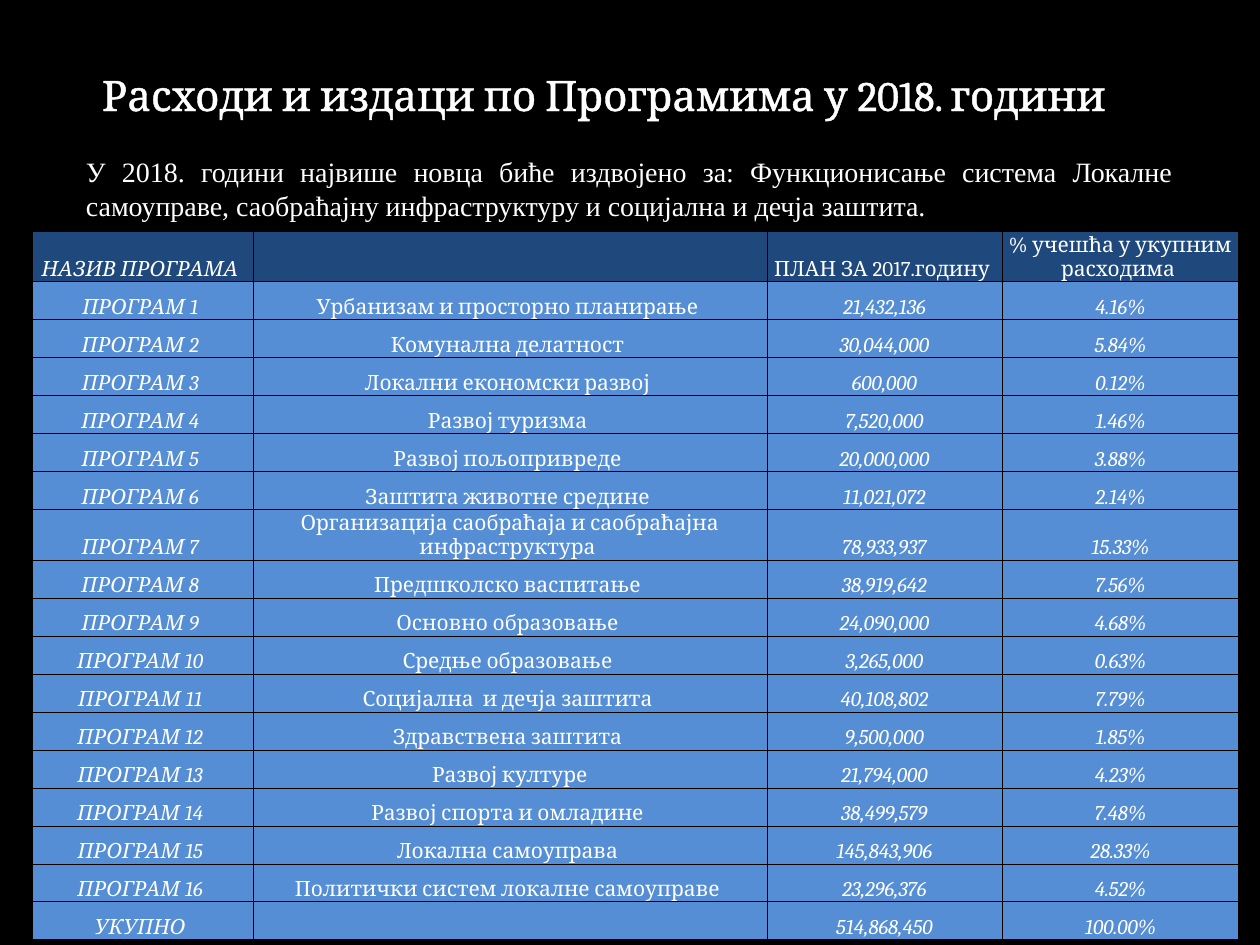
from dataclasses import dataclass

import lxml.etree
import pptx
import pptx.dml.color
import pptx.enum.text
import pptx.oxml.ns
import pptx.util

PX = 914400 // 126
ALIGN = pptx.enum.text.PP_ALIGN
ANCHOR = pptx.enum.text.MSO_ANCHOR
qn = pptx.oxml.ns.qn


@dataclass(frozen=True)
class Theme:
    background: str = "000000"
    text: str = "FFFFFF"
    header: str = "1F497D"
    body: str = "558ED5"
    border: str = "000000"
    serif: str = "Cambria"
    roman: str = "Times New Roman"
    title_size: int = 24
    intro_size: int = 16
    cell_size: int = 12
    outline: float = 1.45
    border_width: float = 0.5


THEME = Theme()

TITLE = "Расходи и издаци по Програмима у 2018. години"
INTRO = (
    "У 2018. години највише новца биће издвојено за: Функционисање система "
    "Локалне самоуправе, саобраћајну инфраструктуру и социјална и дечја заштита."
)
HEADER = ("НАЗИВ ПРОГРАМА ", "", "ПЛАН ЗА 2017.годину ", "% учешћа у укупним расходима ")
PROGRAMS = [
    ("Урбанизам и просторно планирање ", "21,432,136", "4.16%"),
    ("Комунална делатност ", "30,044,000", "5.84%"),
    ("Локални економски развој ", "600,000", "0.12%"),
    ("Развој туризма ", "7,520,000", "1.46%"),
    ("Развој пољопривреде ", "20,000,000", "3.88%"),
    ("Заштита животне средине ", "11,021,072", "2.14%"),
    ("Организација саобраћаја и саобраћајна инфраструктура ", "78,933,937", "15.33%"),
    ("Предшколско васпитање ", "38,919,642", "7.56%"),
    ("Основно образовање ", "24,090,000", "4.68%"),
    ("Средње образовање ", "3,265,000", "0.63%"),
    ("Социјална  и дечја заштита ", "40,108,802", "7.79%"),
    ("Здравствена заштита ", "9,500,000", "1.85%"),
    (" Развој културе ", "21,794,000", "4.23%"),
    ("Развој спорта и омладине ", "38,499,579", "7.48%"),
    ("Локална самоуправа ", "145,843,906", "28.33%"),
    ("Политички систем локалне самоуправе ", "23,296,376", "4.52%"),
]
TOTAL = ("УКУПНО ", "", "514,868,450", "100.00%")
COLUMNS = (221, 514, 235, 237)
ROW_HEIGHT = 38


def rgb(color):
    return pptx.dml.color.RGBColor.from_string(color)


def add_run(p, text, size, font, italic=False):
    r = p.add_run()
    r.text = text
    r.font.size = pptx.util.Pt(size)
    r.font.name = font
    r.font.bold = False
    r.font.italic = italic
    r.font.color.rgb = rgb(THEME.text)
    return r


def make_line(tag, color, width):
    ln = lxml.etree.Element(qn(tag), w=str(int(pptx.util.Pt(width))))
    fill = lxml.etree.SubElement(ln, qn("a:solidFill"))
    lxml.etree.SubElement(fill, qn("a:srgbClr"), val=color)
    return ln


def set_margins(target, left, top, right, bottom):
    target.margin_left, target.margin_top = left * PX, top * PX
    target.margin_right, target.margin_bottom = right * PX, bottom * PX


def place_title(slide, x, y, w, h):
    sp = slide.shapes.title
    sp.left, sp.top, sp.width, sp.height = x * PX, y * PX, w * PX, h * PX
    tf = sp.text_frame
    tf.word_wrap = True
    tf.auto_size = pptx.enum.text.MSO_AUTO_SIZE.NONE
    tf.vertical_anchor = ANCHOR.TOP
    set_margins(tf, 21, 6, 12, 6)
    p = tf.paragraphs[0]
    p.alignment = ALIGN.LEFT
    r = add_run(p, TITLE, THEME.title_size, THEME.serif)
    r.font._element.insert(0, make_line("a:ln", THEME.text, THEME.outline))


def add_intro(slide, x, y, w, h):
    tf = slide.shapes.add_textbox(x * PX, y * PX, w * PX, h * PX).text_frame
    tf.word_wrap = True
    set_margins(tf, 13, 42, 13, 6)
    p = tf.paragraphs[0]
    p.alignment = ALIGN.JUSTIFY
    add_run(p, INTRO, THEME.intro_size, THEME.roman)


def fill_cell(cell, text, color, italic):
    cell.fill.solid()
    cell.fill.fore_color.rgb = rgb(color)
    cell.vertical_anchor = ANCHOR.BOTTOM
    set_margins(cell, 0, 0, 0, 0)
    tc_pr = cell._tc.get_or_add_tcPr()
    for i, side in enumerate("LRTB"):
        tc_pr.insert(i, make_line(f"a:ln{side}", THEME.border, THEME.border_width))
    p = cell.text_frame.paragraphs[0]
    p.alignment = ALIGN.CENTER
    if text:
        add_run(p, text, THEME.cell_size, THEME.serif, italic)
    else:
        lxml.etree.SubElement(p._p, qn("a:endParaRPr"), sz=str(THEME.cell_size * 100))


def add_program_table(slide, x, y):
    programs = [(f"ПРОГРАМ {n} ", *values) for n, values in enumerate(PROGRAMS, 1)]
    rows = [HEADER, *programs, TOTAL]
    table = slide.shapes.add_table(
        len(rows), len(COLUMNS), x * PX, y * PX,
        sum(COLUMNS) * PX, len(rows) * ROW_HEIGHT * PX,
    ).table
    table.horz_banding = False
    for column, width in zip(table.columns, COLUMNS):
        column.width = width * PX
    for i, values in enumerate(rows):
        table.rows[i].height = ROW_HEIGHT * PX
        color = THEME.body if i else THEME.header
        for j, text in enumerate(values):
            italic = j != 1 if i else j == 0
            fill_cell(table.cell(i, j), text, color, italic)


def main():
    prs = pptx.Presentation()
    prs.slide_width, prs.slide_height = 1260 * PX, 945 * PX
    slide = prs.slides.add_slide(prs.slide_layouts.get_by_name("Title Only"))
    slide.background.fill.solid()
    slide.background.fill.fore_color.rgb = rgb(THEME.background)
    place_title(slide, 81, 63, 1098, 63)
    add_intro(slide, 73, 113, 1113, 118)
    add_program_table(slide, 32, 231)
    prs.save("out.pptx")


if __name__ == "__main__":
    main()
